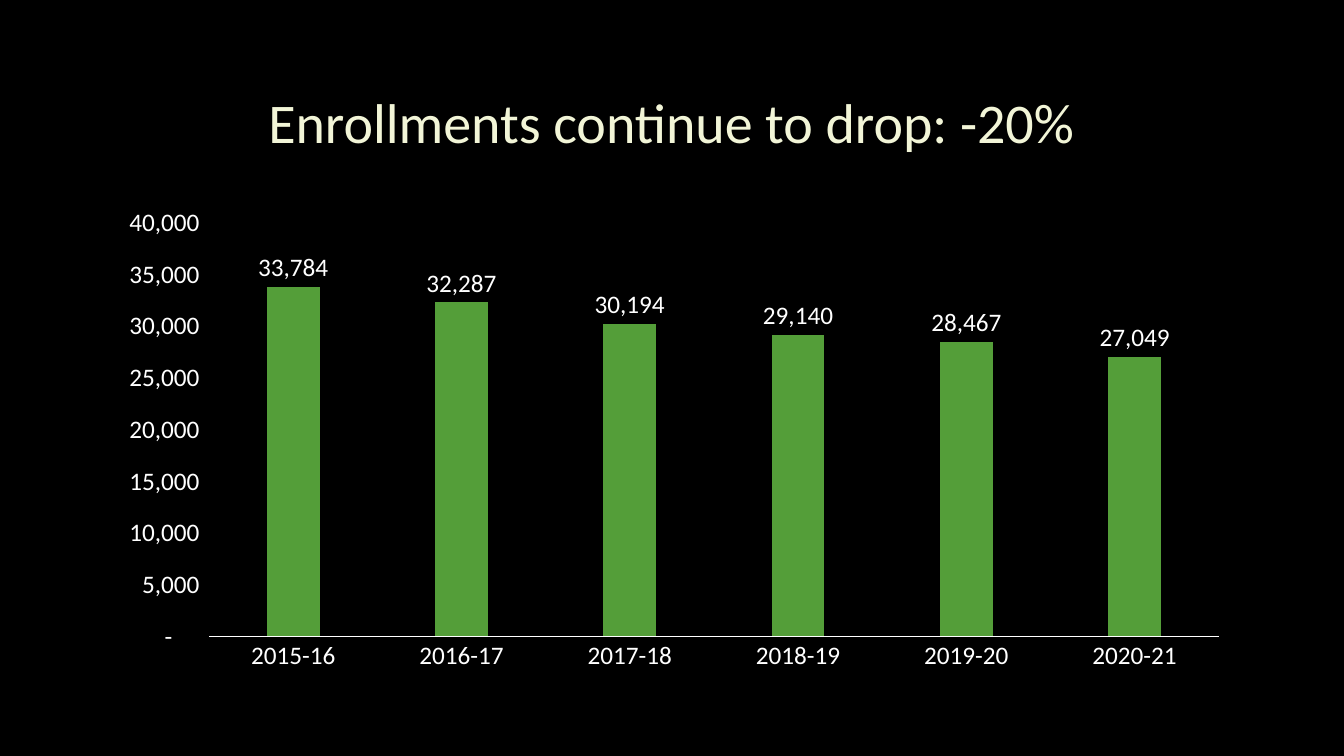
from pptx import Presentation
from pptx import util as u
from pptx.chart.data import CategoryChartData
from pptx.dml.color import RGBColor
from pptx.enum import chart as charts, text

BLACK = RGBColor(0x00, 0x00, 0x00)
WHITE = RGBColor(0xFF, 0xFF, 0xFF)
CREAM = RGBColor(0xF2, 0xF5, 0xD7)
GREEN = RGBColor(0x54, 0x9E, 0x39)
FONT = "Calibri"
COUNT_FORMAT = '_(* #,##0_);_(* \\(#,##0\\);_(* "-"??_);_(@_)'
ENROLLMENTS = {
    "2015-16": 33784,
    "2016-17": 32287,
    "2017-18": 30194,
    "2018-19": 29140,
    "2019-20": 28467,
    "2020-21": 27049,
}


def style_font(font, size, color):
    """Give a font the slide's typeface, a size in points and a colour."""
    font.name = FONT
    font.size = u.Pt(size)
    font.bold = False
    font.color.rgb = color


def add_title(slide, wording, left, top, width, height):
    """Place the title placeholder in the box and format its wording."""
    title = slide.shapes.title
    title.left, title.top, title.width, title.height = left, top, width, height
    frame = title.text_frame
    frame.text = wording
    frame.word_wrap = True
    frame.vertical_anchor = text.MSO_ANCHOR.MIDDLE
    paragraph = frame.paragraphs[0]
    paragraph.alignment = text.PP_ALIGN.CENTER
    style_font(paragraph.runs[0].font, 40, CREAM)


def style_axis(axis):
    """Remove the gridlines and ticks of an axis and set its label font."""
    axis.has_major_gridlines = False
    axis.major_tick_mark = charts.XL_TICK_MARK.NONE
    axis.minor_tick_mark = charts.XL_TICK_MARK.NONE
    style_font(axis.tick_labels.font, 18, WHITE)


def add_enrollment_chart(slide, left, top, width, height):
    """Fill the box with a column chart of yearly enrollments."""
    data = CategoryChartData(number_format=COUNT_FORMAT)
    data.categories = list(ENROLLMENTS)
    data.add_series("Series 1", list(ENROLLMENTS.values()))
    chart = slide.shapes.add_chart(
        charts.XL_CHART_TYPE.COLUMN_CLUSTERED, left, top, width, height, data
    ).chart
    chart.has_title = False
    chart.has_legend = False
    style_font(chart.font, 18, WHITE)

    style_axis(chart.category_axis)
    chart.category_axis.format.line.color.rgb = WHITE
    chart.category_axis.format.line.width = u.Pt(0.75)

    value_axis = chart.value_axis
    style_axis(value_axis)
    value_axis.format.line.fill.background()
    value_axis.minimum_scale = 0
    value_axis.maximum_scale = 40000
    value_axis.major_unit = 5000
    value_axis.tick_labels.number_format = COUNT_FORMAT
    value_axis.tick_labels.number_format_is_linked = False

    plot = chart.plots[0]
    plot.gap_width = 219
    plot.overlap = -27
    plot.vary_by_categories = False
    series = plot.series[0]
    series.format.fill.solid()
    series.format.fill.fore_color.rgb = GREEN
    labels = series.data_labels
    labels.show_value = True
    labels.position = charts.XL_LABEL_POSITION.OUTSIDE_END
    labels.number_format = COUNT_FORMAT
    labels.number_format_is_linked = False
    style_font(labels.font, 18, WHITE)


def add_enrollment_slide(presentation):
    """Build the black slide with its title above the chart."""
    slide = presentation.slides.add_slide(presentation.slide_layouts[5])
    slide.background.fill.solid()
    slide.background.fill.fore_color.rgb = BLACK
    left, width = u.Cm(2.54), u.Cm(28.75)
    add_title(slide, "Enrollments continue to drop: -20%",
              left, u.Cm(1.7), width, u.Cm(2.7))
    add_enrollment_chart(slide, left, u.Cm(4.98), width, u.Cm(12.17))


def main():
    """Create the presentation and save it."""
    presentation = Presentation()
    presentation.slide_width = u.Cm(33.87)
    presentation.slide_height = u.Cm(19.05)
    add_enrollment_slide(presentation)
    presentation.save("out.pptx")


if __name__ == "__main__":
    main()
